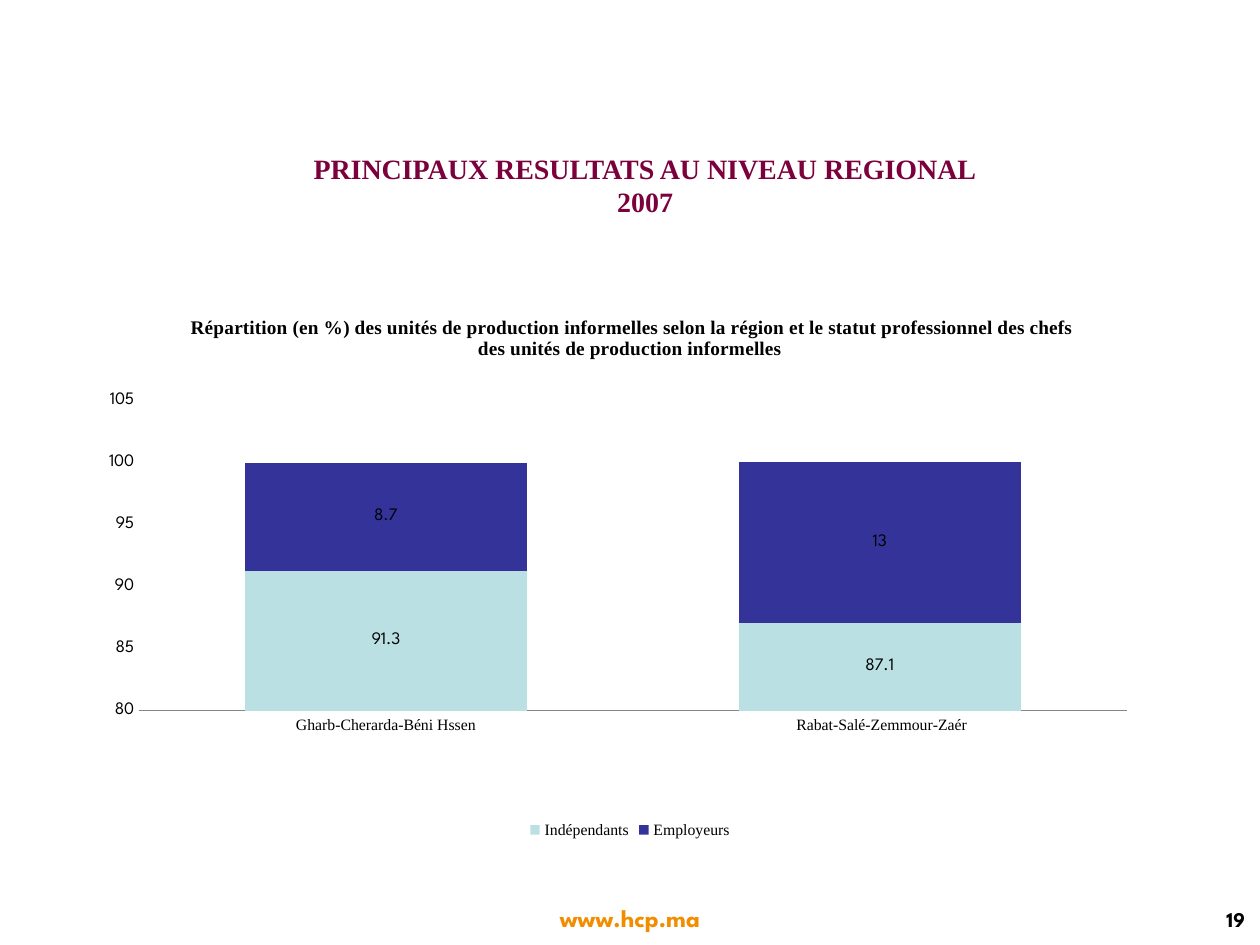
from lxml import etree
from pptx import Presentation
from pptx.chart.data import CategoryChartData
from pptx.dml.color import RGBColor
from pptx.enum.chart import XL_CHART_TYPE, XL_LABEL_POSITION as POS
from pptx.enum.chart import XL_LEGEND_POSITION, XL_TICK_MARK as TICK
from pptx.enum.text import MSO_ANCHOR as ANCHOR, PP_ALIGN as ALIGN
from pptx.oxml.ns import qn
from pptx.util import Inches, Pt

SERIF, SANS = "Times New Roman", "League Spartan"
BLACK = "000000"


def rgb(hex_color):
    return RGBColor.from_string(hex_color)


def style_font(font, size, name, color=BLACK, bold=False):
    font.size, font.name, font.bold = Pt(size), name, bold
    font.color.rgb = rgb(color)


def add_text(slide, box, text, size, name, color, align, anchor=ANCHOR.MIDDLE):
    tf = slide.shapes.add_textbox(*map(Inches, box)).text_frame
    tf.word_wrap = True
    tf.vertical_anchor = anchor
    p = tf.paragraphs[0]
    p.text = text
    p.alignment = align
    style_font(p.font, size, name, color, bold=True)


def set_plot_area(chart, **fractions):
    """Fix the inner plot area as fractions of the chart."""
    area = chart._chartSpace.chart.plotArea
    for old in area.findall(qn("c:layout")):
        area.remove(old)
    layout = etree.Element(qn("c:layout"))
    area.insert(0, layout)
    manual = etree.SubElement(layout, qn("c:manualLayout"))
    settings = {"layoutTarget": "inner", "xMode": "edge", "yMode": "edge", **fractions}
    for tag, value in settings.items():
        etree.SubElement(manual, qn(f"c:{tag}")).set("val", str(value))


def add_status_chart(slide, box):
    data = CategoryChartData()
    data.categories = ["Gharb-Cherarda-Béni Hssen", " Rabat-Salé-Zemmour-Zaér"]
    data.add_series("Indépendants", (91.3, 87.1))
    data.add_series("Employeurs", (8.7, 13))
    chart = slide.shapes.add_chart(
        XL_CHART_TYPE.COLUMN_STACKED, *map(Inches, box), data).chart
    style_font(chart.font, 10, SANS)

    # Title and legend
    chart.has_title = True
    p = chart.chart_title.text_frame.paragraphs[0]
    p.text = (" Répartition (en %) des unités de production informelles selon la région"
              " et le statut professionnel des chefs des unités de production informelles")
    style_font(p.font, 11, SERIF, bold=True)
    chart.has_legend = True
    chart.legend.position = XL_LEGEND_POSITION.BOTTOM
    chart.legend.include_in_layout = False
    style_font(chart.legend.font, 9, SERIF)

    # Axes
    cat_axis, val_axis = chart.category_axis, chart.value_axis
    for axis in (cat_axis, val_axis):
        axis.major_tick_mark = axis.minor_tick_mark = TICK.NONE
        axis.has_major_gridlines = False
    style_font(cat_axis.tick_labels.font, 9, SERIF)
    cat_axis.format.line.color.rgb = rgb("868686")
    val_axis.minimum_scale, val_axis.maximum_scale = 80, 105
    val_axis.major_unit = 5
    val_axis.format.line.fill.background()

    # Stacked columns
    plot = chart.plots[0]
    plot.gap_width, plot.overlap, plot.vary_by_categories = 75, 100, False
    for series, color in zip(plot.series, ("BBE0E3", "333399")):
        series.format.fill.solid()
        series.format.fill.fore_color.rgb = rgb(color)
        labels = series.data_labels
        labels.show_value = True
        labels.position = POS.CENTER
        style_font(labels.font, 10, SANS)
    set_plot_area(chart, x=0.067, y=0.195, w=0.871, h=0.563)


def add_footer(slide, top):
    add_text(slide, (3.82, top, 2.36, 0.33), "www.hcp.ma", 14, SANS, "F18E00",
             ALIGN.CENTER, ANCHOR.TOP)
    add_text(slide, (8.46, top, 1.52, 0.35), "19", 12, SANS, BLACK, ALIGN.RIGHT)


def main():
    prs = Presentation()
    prs.slide_width, prs.slide_height = Inches(10), Inches(7.5)
    slide = prs.slides.add_slide(prs.slide_layouts[6])
    add_text(slide, (1.3, 0.84, 7.64, 1.25),
             "PRINCIPAUX RESULTATS AU NIVEAU REGIONAL\v2007",
             16, SERIF, "7B003B", ALIGN.CENTER)
    add_status_chart(slide, (0.5, 2.33, 9, 4.37))
    add_footer(slide, 7.12)
    prs.save("out.pptx")


if __name__ == "__main__":
    main()
